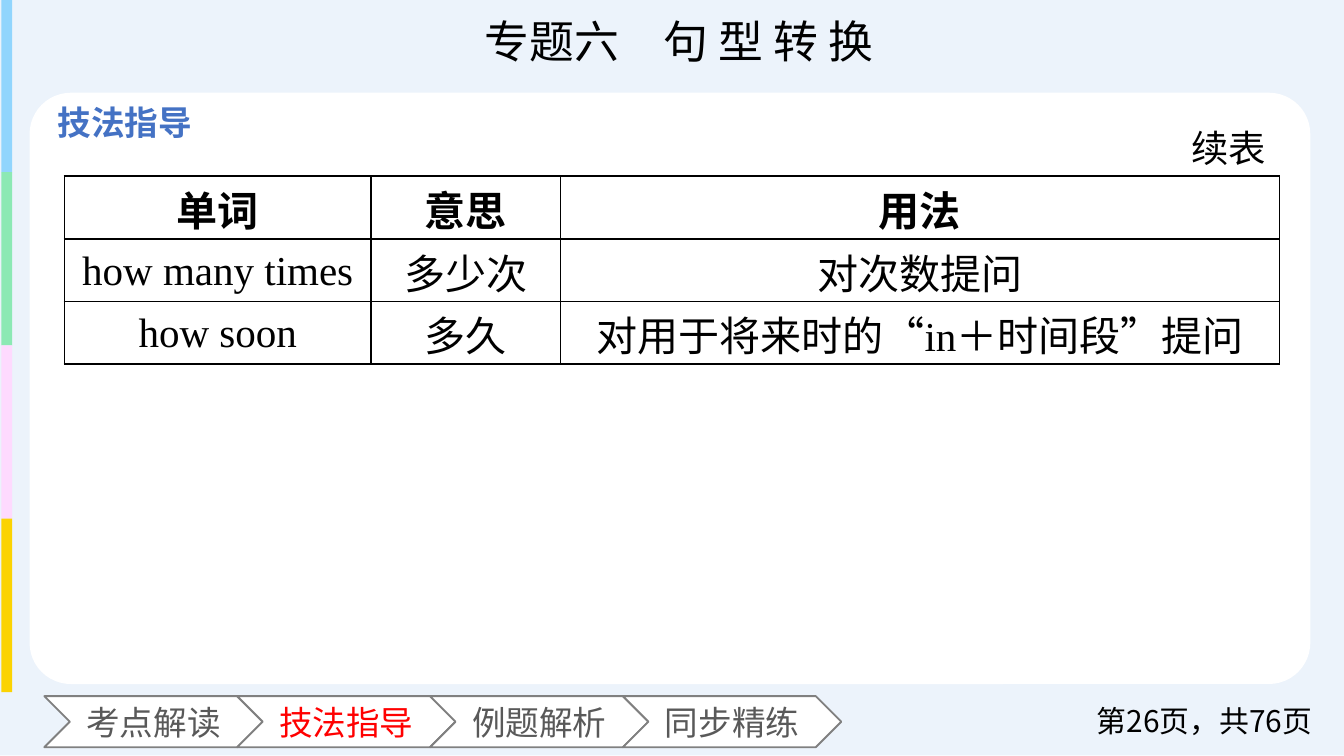
from lxml import etree
from pptx import Presentation
from pptx.dml.color import RGBColor
from pptx.enum.shapes import MSO_SHAPE
from pptx.enum.text import MSO_ANCHOR, PP_ALIGN
from pptx.oxml import parse_xml
from pptx.oxml.ns import nsdecls, qn
from pptx.util import Inches, Pt

RECT, ROUND, CHEVRON = MSO_SHAPE.RECTANGLE, MSO_SHAPE.ROUNDED_RECTANGLE, MSO_SHAPE.CHEVRON
LEFT, CENTER, RIGHT = PP_ALIGN.LEFT, PP_ALIGN.CENTER, PP_ALIGN.RIGHT
TOP, MIDDLE = MSO_ANCHOR.TOP, MSO_ANCHOR.MIDDLE
SANS, SERIF = "Noto Sans CJK SC", "Times New Roman"
STRIPES = ["91D5FD", "8CE9B4", "FEDAFE", "FBD302"]
TABS = ["考点解读", "技法指导", "例题解析", "同步精练"]
ACTIVE_TAB = "技法指导"
COLUMN_WIDTHS = [2.28, 1.41, 5.35]
ROWS = [
    ["单词", "意思", "用法"],
    ["how many times", "多少次", "对次数提问"],
    ["how soon", "多久", "对用于将来时的“in＋时间段”提问"],
]


def rgb(color):
    """Turn a hex string into a colour."""
    return RGBColor.from_string(color)


def write(p, text, align, color="000000", **formats):
    """Write one run with a Latin font and the sans East Asian font."""
    p.alignment = align
    r = p.add_run()
    r.text = text
    for name, value in formats.items():
        setattr(r.font, name, value)
    r.font.color.rgb = rgb(color)
    ea = etree.SubElement(r.font._element, qn("a:ea"))
    ea.set("typeface", SANS)


def add_label(s, box, text, align, anchor=TOP, **formats):
    """Place a text box in the given box."""
    tf = s.shapes.add_textbox(*map(Inches, box)).text_frame
    tf.word_wrap = True
    tf.vertical_anchor = anchor
    write(tf.paragraphs[0], text, align, **formats)


def add_block(s, kind, box, fill, line=None):
    """Place a flat shape in the given box."""
    sp = s.shapes.add_shape(kind, *map(Inches, box))
    sp.shadow.inherit = False
    sp.fill.solid()
    sp.fill.fore_color.rgb = rgb(fill)
    if line:
        sp.line.color.rgb = rgb(line)
        sp.line.width = Pt(1)
    else:
        sp.line.fill.background()
    return sp


def add_stripes(s, box):
    """Stack the coloured stripes down the box."""
    left, top, width, height = box
    step = height / len(STRIPES)
    for i, color in enumerate(STRIPES):
        add_block(s, RECT, (left, top + i * step, width, step), color)


def add_tabs(s, box):
    """Lay interlocking chevron tabs along the box."""
    left, top, width, height = box
    notch = height / 2
    step = (width - notch) / len(TABS)
    for i, tab in enumerate(TABS):
        sp = add_block(s, CHEVRON, (left + i * step, top, step + notch, height), "FFFFFF", "808080")
        tf = sp.text_frame
        tf.word_wrap = False
        tf.vertical_anchor = MIDDLE
        tf.margin_left = tf.margin_right = tf.margin_top = tf.margin_bottom = 0
        color = "FF0000" if tab == ACTIVE_TAB else "595959"
        write(tf.paragraphs[0], tab, CENTER, color, name=SANS, size=Pt(18))


def add_borders(cell):
    """Draw black lines on all sides of a cell."""
    tcPr = cell._tc.get_or_add_tcPr()
    for i, side in enumerate(("lnL", "lnR", "lnT", "lnB")):
        tcPr.insert(i, parse_xml(
            f'<a:{side} {nsdecls("a")} w="12700"><a:solidFill>'
            f'<a:srgbClr val="000000"/></a:solidFill></a:{side}>'))


def add_usage_table(s, box):
    """Fill the box with the word usage table."""
    table = s.shapes.add_table(len(ROWS), len(COLUMN_WIDTHS), *map(Inches, box)).table
    table.horz_banding = False
    for column, width in zip(table.columns, COLUMN_WIDTHS):
        column.width = Inches(width)
    for i, row in enumerate(ROWS):
        for j, text in enumerate(row):
            cell = table.cell(i, j)
            cell.fill.background()
            cell.vertical_anchor = MIDDLE
            cell.margin_top, cell.margin_bottom = Inches(0.02), 0
            add_borders(cell)
            write(cell.text_frame.paragraphs[0], text, CENTER,
                  name=SERIF, size=Pt(22), bold=i == 0)


def build_slide(prs):
    """Build the technique guide slide."""
    s = prs.slides.add_slide(prs.slide_layouts[6])
    s.background.fill.solid()
    s.background.fill.fore_color.rgb = rgb("FFFFFF")
    add_block(s, RECT, (0, 0, 10, 5.62), "ECF3FB")
    add_label(s, (1.76, 0.05, 6.58, 0.5), "专题六　句 型 转 换", CENTER,
              name=SERIF, size=Pt(24))
    add_stripes(s, (0.01, -0.01, 0.08, 5.16))
    panel = add_block(s, ROUND, (0.22, 0.69, 9.53, 4.4), "FFFFFF")
    panel.adjustments[0] = 0.07
    add_label(s, (0.33, 0.71, 1.29, 0.4), "技法指导", LEFT, color="4472C4",
              name=SANS, size=Pt(18), bold=True)
    add_tabs(s, (0.33, 5.18, 5.93, 0.38))
    add_label(s, (7.83, 5.21, 2.03, 0.3), "第26页，共76页", RIGHT, MIDDLE,
              name=SANS, size=Pt(16))
    add_usage_table(s, (0.48, 1.31, 9.04, 1.4))
    add_label(s, (8.57, 0.88, 0.95, 0.44), "续表", RIGHT, name=SANS, size=Pt(20))


def main():
    """Save the presentation."""
    prs = Presentation()
    prs.slide_width = Inches(10)
    prs.slide_height = prs.slide_width * 9 // 16
    build_slide(prs)
    prs.save("out.pptx")


if __name__ == "__main__":
    main()
